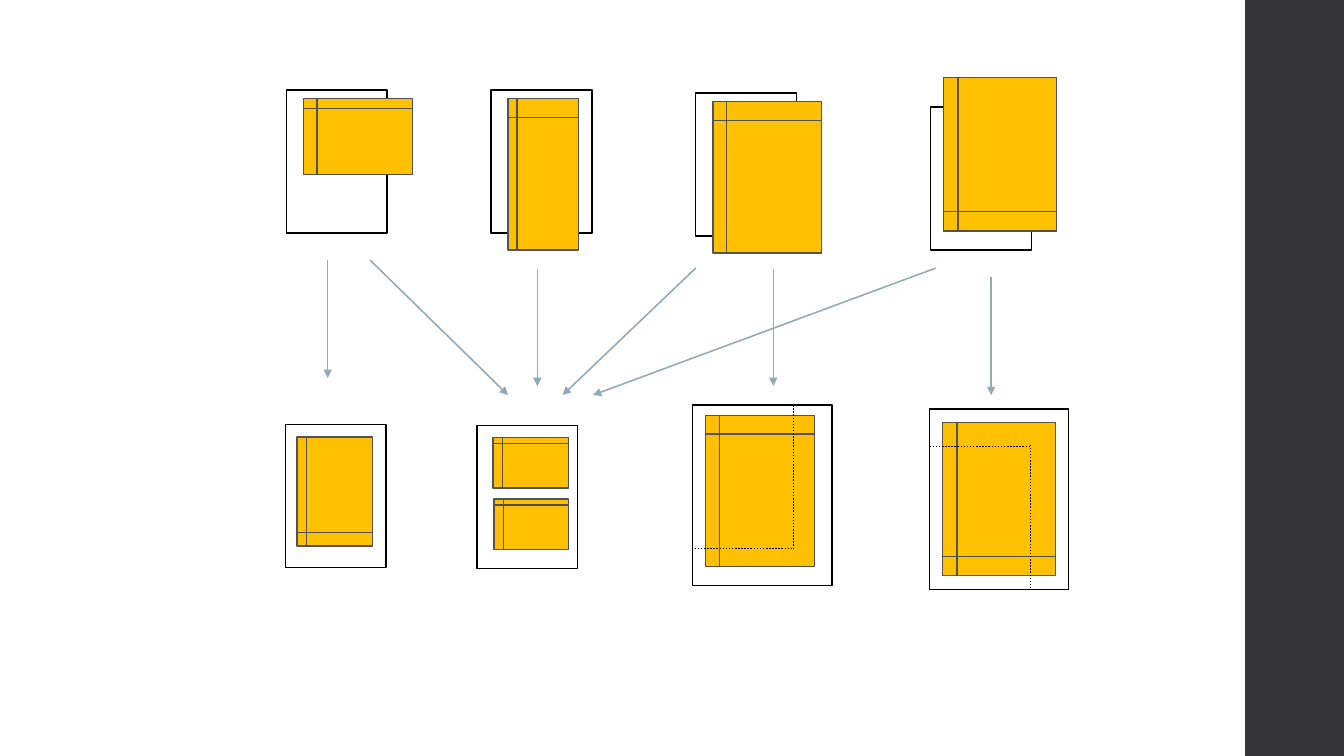
"""Build a slide showing how oversized cards are fitted onto pages."""
from dataclasses import dataclass

from lxml import etree
from pptx import Presentation
from pptx.dml.color import RGBColor
from pptx.enum.dml import MSO_LINE
from pptx.enum.shapes import MSO_CONNECTOR, MSO_SHAPE
from pptx.oxml.ns import qn
from pptx.util import Emu, Pt

RECTANGLE = MSO_SHAPE.RECTANGLE
CARD_SHAPE = MSO_SHAPE.FLOWCHART_INTERNAL_STORAGE
STRAIGHT = MSO_CONNECTOR.STRAIGHT
DOTTED = MSO_LINE.ROUND_DOT

EMU_PER_PX = 9144
SLIDE_WIDTH, SLIDE_HEIGHT = 1333, 750
BLANK_LAYOUT = 6

WHITE = "FFFFFF"
BLACK = "000000"
AMBER = "FFC000"
CARD_EDGE = "525256"
ARROW_BLUE = "92A9B9"
SIDEBAR_GREY = "353537"
LINE_WIDTH = 1.1
CARD_LINE_WIDTH = 1


@dataclass(frozen=True)
class Box:
    left: int
    top: int
    width: int
    height: int
    rotation: int = 0


@dataclass(frozen=True)
class Segment:
    start_x: int
    start_y: int
    end_x: int
    end_y: int


SIDEBAR = Box(1235, 0, 100, SLIDE_HEIGHT)
SMALL_PAGE = (100, 142)
LARGE_PAGE = (138, 179)

PAGES = [
    *(Box(left, top, *SMALL_PAGE) for left, top in
      [(284, 89), (487, 89), (690, 92), (923, 106), (283, 421), (473, 422)]),
    *(Box(left, top, *LARGE_PAGE) for left, top in [(687, 402), (922, 406)]),
]

CARDS = [
    Box(301, 98, 108, 75),
    Box(504, 98, 70, 150),
    Box(707, 101, 108, 150),
    Box(916, 97, 152, 112, 270),
    Box(278, 450, 108, 75, 270),
    Box(489, 434, 75, 50),
    Box(490, 495, 74, 50),
    Box(700, 412, 108, 150),
    Box(915, 439, 152, 112, 270),
]

PAGE_LIMITS = [
    Segment(787, 402, 787, 544),
    Segment(686, 544, 787, 544),
    Segment(922, 443, 1022, 443),
    Segment(1022, 441, 1022, 583),
]

ARROWS = [
    Segment(325, 258, 325, 375),
    Segment(367, 258, 504, 392),
    Segment(533, 267, 533, 383),
    Segment(767, 267, 767, 383),
    Segment(983, 275, 983, 392),
    Segment(690, 266, 558, 392),
    Segment(928, 266, 588, 392),
]


def px(length: int) -> Emu:
    """Turn px into EMU."""
    return Emu(length * EMU_PER_PX)


def color(value: str) -> RGBColor:
    """Turn a hex string into a colour."""
    return RGBColor.from_string(value)


def add_box(slide, kind, box: Box, fill: str, edge: str = "", width: float = 0):
    """Draw a filled shape, with an outline if an edge colour is given."""
    shape = slide.shapes.add_shape(
        kind, px(box.left), px(box.top), px(box.width), px(box.height))
    shape.rotation = box.rotation
    shape.shadow.inherit = False
    shape.fill.solid()
    shape.fill.fore_color.rgb = color(fill)
    if edge:
        shape.line.color.rgb = color(edge)
        shape.line.width = Pt(width)
    else:
        shape.line.fill.background()
    return shape


def add_line(slide, segment: Segment, stroke: str):
    """Draw a straight line without a shadow."""
    connector = slide.shapes.add_connector(
        STRAIGHT, px(segment.start_x), px(segment.start_y),
        px(segment.end_x), px(segment.end_y))
    connector.line.color.rgb = color(stroke)
    connector.line.width = Pt(LINE_WIDTH)
    etree.SubElement(connector._element.spPr, qn("a:effectLst"))
    return connector


def add_page_limit(slide, segment: Segment) -> None:
    """Draw a dotted line where the small page would end."""
    add_line(slide, segment, BLACK).line.dash_style = DOTTED


def add_arrow(slide, segment: Segment) -> None:
    """Draw a line with a triangle at its end."""
    connector = add_line(slide, segment, ARROW_BLUE)
    outline = connector.line._get_or_add_ln()
    etree.SubElement(outline, qn("a:tailEnd"), type="triangle")


def main() -> None:
    """Build and save the slide."""
    presentation = Presentation()
    presentation.slide_width = px(SLIDE_WIDTH)
    presentation.slide_height = px(SLIDE_HEIGHT)
    slide = presentation.slides.add_slide(
        presentation.slide_layouts[BLANK_LAYOUT])
    add_box(slide, RECTANGLE, SIDEBAR, SIDEBAR_GREY)
    for page in PAGES:
        add_box(slide, RECTANGLE, page, WHITE, BLACK, LINE_WIDTH)
    for card in CARDS:
        add_box(slide, CARD_SHAPE, card, AMBER, CARD_EDGE, CARD_LINE_WIDTH)
    for limit in PAGE_LIMITS:
        add_page_limit(slide, limit)
    for arrow in ARROWS:
        add_arrow(slide, arrow)
    presentation.save("out.pptx")


if __name__ == "__main__":
    main()
